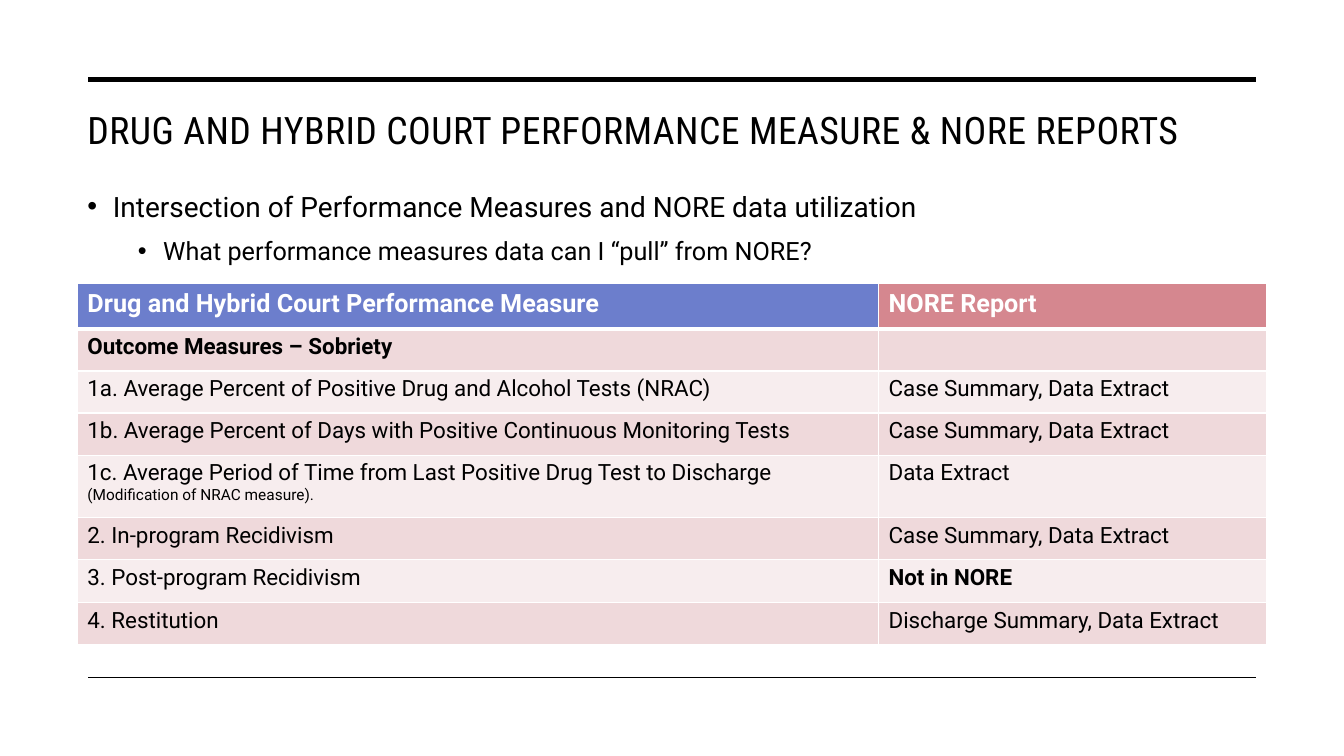
from lxml import etree
from pptx import Presentation
from pptx.dml.color import RGBColor
from pptx.enum.shapes import MSO_CONNECTOR
from pptx.enum.text import MSO_ANCHOR, MSO_AUTO_SIZE, PP_ALIGN
from pptx.oxml.ns import qn
from pptx.util import Cm, Pt

STRAIGHT = MSO_CONNECTOR.STRAIGHT
TOP = MSO_ANCHOR.TOP
NO_FIT = MSO_AUTO_SIZE.NONE
LEFT = PP_ALIGN.LEFT

COLORS = {
    "black": "000000",
    "white": "FFFFFF",
    "blue": "6C7ECC",
    "rose": "D5878F",
    "band_dark": "EFD9DB",
    "band_light": "F7EDEE",
}
BODY_FONT = "Roboto"
TITLE_FONT = "Roboto Condensed"

TITLE = "DRUG AND HYBRID COURT PERFORMANCE MEASURE & NORE REPORTS"
BULLETS = [
    ("Intersection of Performance Measures and NORE data utilization", 20, 10, 0.64),
    ("What performance measures data can I “pull” from NORE?", 18, 5, 1.91),
]
HEADER = ("Drug and Hybrid Court Performance Measure", "NORE Report")
SECTION = "Outcome Measures – Sobriety"
NOT_AVAILABLE = "Not in NORE"
MEASURES = [
    (SECTION, ""),
    ("1a. Average Percent of Positive Drug and Alcohol Tests (NRAC)",
     "Case Summary, Data Extract"),
    ("1b. Average Percent of Days with Positive Continuous Monitoring Tests",
     "Case Summary, Data Extract"),
    ("1c. Average Period of Time from Last Positive Drug Test to Discharge",
     "Data Extract"),
    ("2. In-program Recidivism", "Case Summary, Data Extract"),
    ("3. Post-program Recidivism", NOT_AVAILABLE),
    ("4. Restitution", "Discharge Summary, Data Extract"),
]
FOOTNOTES = {MEASURES[3][0]: "(Modification of NRAC measure)."}
COL_WIDTHS = (20.19, 9.78)
ROW_HEIGHTS = (1.14, 1.06, 1.06, 1.06, 1.57, 1.06, 1.09, 1.06)


def rgb(name):
    return RGBColor.from_string(COLORS[name])


def apply(target, formats):
    for name, value in formats.items():
        setattr(target, name, value)


class SlideBuilder:
    def __init__(self, slide, font):
        self.slide = slide
        self.font = font

    def run(self, p, text, size, color="black", bold=False, font=None):
        r = p.add_run()
        r.text = text
        apply(r.font, {"size": Pt(size), "name": font or self.font, "bold": bold})
        r.font.color.rgb = rgb(color)
        return r

    def rule(self, y, width):
        line = self.slide.shapes.add_connector(
            STRAIGHT, Cm(2.23), Cm(y), Cm(31.65), Cm(y))
        line.line.color.rgb = rgb("black")
        line.line.width = Pt(width)
        etree.SubElement(line._element.spPr, qn("a:effectLst"))

    def placeholder(self, sp, top, height):
        apply(sp, {"left": Cm(1.95), "top": Cm(top),
                   "width": Cm(29.69), "height": Cm(height)})
        tf = sp.text_frame
        apply(tf, {"word_wrap": True, "auto_size": NO_FIT, "vertical_anchor": TOP})
        return tf

    def title(self, text):
        tf = self.placeholder(self.slide.shapes.title, 2.57, 3.81)
        p = tf.paragraphs[0]
        p.alignment = LEFT
        r = self.run(p, text, 27, font=TITLE_FONT)
        r._r.get_or_add_rPr().set("spc", "30")

    def bullets(self, items):
        tf = self.placeholder(self.slide.placeholders[1], 4.47, 10.11)
        for level, (text, size, before, margin) in enumerate(items):
            p = tf.add_paragraph() if level else tf.paragraphs[0]
            apply(p, {"level": level, "line_spacing": 1.2, "space_before": Pt(before)})
            pPr = p._p.get_or_add_pPr()
            pPr.set("marL", str(Cm(margin)))
            pPr.set("indent", str(-Cm(0.64)))
            etree.SubElement(pPr, qn("a:buFont"), typeface="Arial")
            etree.SubElement(pPr, qn("a:buChar"), char="•")
            self.run(p, text, size)

    def borders(self, cell, bottom):
        tcPr = cell._tc.get_or_add_tcPr()
        for side, width in (("L", 1), ("R", 1), ("T", 1), ("B", bottom)):
            ln = etree.SubElement(tcPr, qn(f"a:ln{side}"), w=str(Pt(width)))
            fill = etree.SubElement(ln, qn("a:solidFill"))
            etree.SubElement(fill, qn("a:srgbClr"), val=COLORS["white"])

    def cell(self, cell, text, fill, size=16, color="black", bold=False, bottom=1):
        self.borders(cell, bottom)
        cell.fill.solid()
        cell.fill.fore_color.rgb = rgb(fill)
        p = cell.text_frame.paragraphs[0]
        if text:
            self.run(p, text, size, color, bold)
        if text in FOOTNOTES:
            p.add_line_break()
            self.run(p, FOOTNOTES[text], 11)

    def table(self, header, rows):
        table = self.slide.shapes.add_table(
            len(rows) + 1, len(header), Cm(1.95), Cm(7.15),
            Cm(sum(COL_WIDTHS)), Cm(sum(ROW_HEIGHTS))).table
        table.horz_banding = False
        for col, width in zip(table.columns, COL_WIDTHS):
            col.width = Cm(width)
        for row, height in zip(table.rows, ROW_HEIGHTS):
            row.height = Cm(height)
        for j, (text, fill) in enumerate(zip(header, ("blue", "rose"))):
            self.cell(table.cell(0, j), text, fill, 18, "white", True, 3)
        for i, row in enumerate(rows, 1):
            fill = "band_dark" if i % 2 else "band_light"
            for j, text in enumerate(row):
                self.cell(table.cell(i, j), text, fill,
                          bold=text in (SECTION, NOT_AVAILABLE))


def main():
    prs = Presentation()
    prs.slide_width, prs.slide_height = Cm(33.87), Cm(19.05)
    s = SlideBuilder(prs.slides.add_slide(prs.slide_layouts[1]), BODY_FONT)
    s.rule(2.01, 3.5)
    s.rule(17.07, 1)
    s.title(TITLE)
    s.bullets(BULLETS)
    s.table(HEADER, MEASURES)
    prs.save("out.pptx")


if __name__ == "__main__":
    main()
